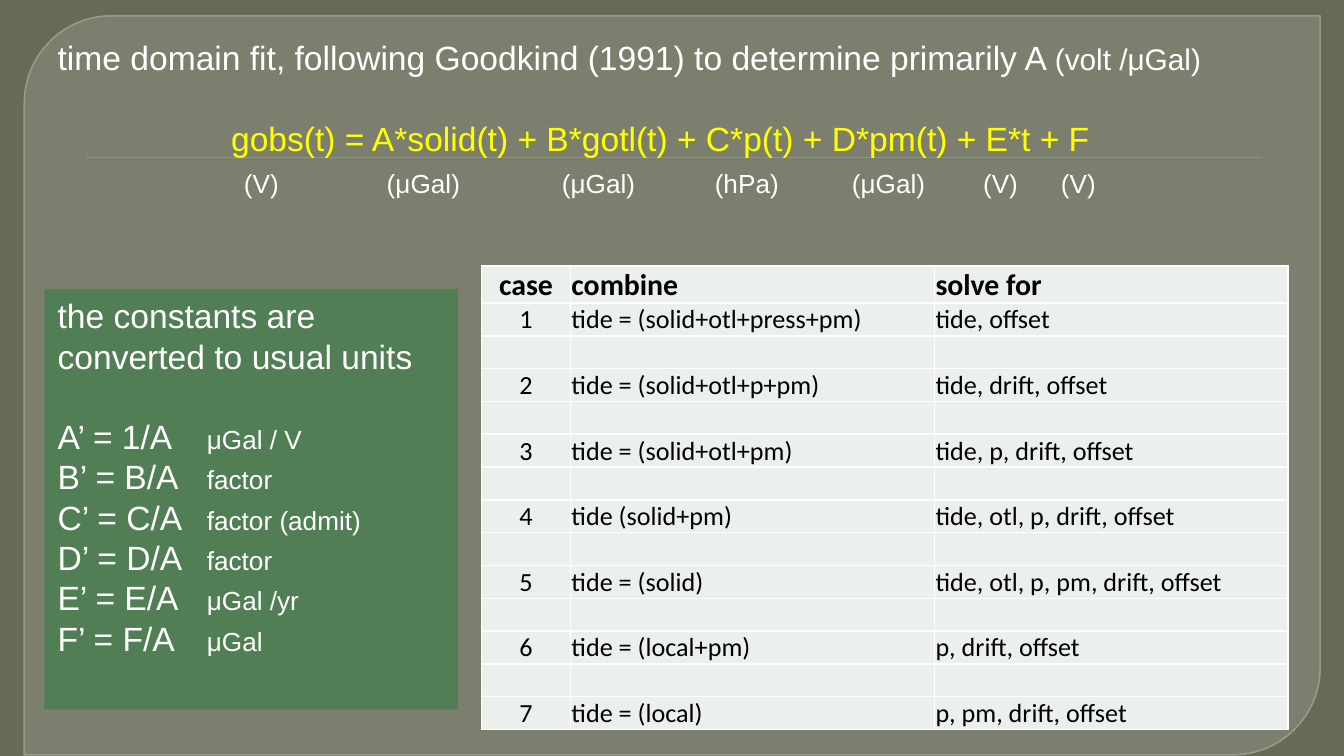
import lxml.etree
import pptx
import pptx.dml.color
import pptx.enum.shapes
import pptx.enum.text
import pptx.oxml.ns
import pptx.util
from pptx.util import Cm, Pt

SHAPE = pptx.enum.shapes.MSO_SHAPE
ALIGN = pptx.enum.text.PP_ALIGN
ANCHOR = pptx.enum.text.MSO_ANCHOR
qn = pptx.oxml.ns.qn

WHITE = "FFFFFF"
PITCH = Pt(21.6)
UNITS = ["(V)", "(μGal)", "(μGal)", "(hPa)", "(μGal)", "(V)", "(V)"]
UNIT_STOPS = [3.52, 6.22, 9.53, 12.42, 15.01, 17.49, 18.96]
CONSTANTS = [
    ("A", "μGal / V"),
    ("B", "factor"),
    ("C", "factor (admit)"),
    ("D", "factor"),
    ("E", "μGal /yr"),
    ("F", "μGal"),
]
CASES = [
    ("tide = (solid+otl+press+pm)", "tide, offset"),
    ("tide = (solid+otl+p+pm)", "tide, drift, offset"),
    ("tide = (solid+otl+pm)", "tide, p, drift, offset"),
    ("tide (solid+pm)", "tide, otl, p, drift, offset"),
    ("tide = (solid)", "tide, otl, p, pm, drift, offset"),
    ("tide = (local+pm)", "p, drift, offset"),
    ("tide = (local)", "p, pm, drift, offset"),
]


def rgb(value):
    """Return the colour for a hex string."""
    return pptx.dml.color.RGBColor.from_string(value)


def set_alpha(fill, percent):
    """Make a solid fill partly transparent."""
    color = fill._xPr.find(qn("a:solidFill"))[0]
    lxml.etree.SubElement(color, qn("a:alpha")).set("val", str(percent * 1000))


def add_box(slide, kind, left, top, width, height, fill):
    """Add a flat shape without outline, measured in centimetres."""
    sp = slide.shapes.add_shape(kind, Cm(left), Cm(top), Cm(width), Cm(height))
    sp.shadow.inherit = False
    sp.fill.solid()
    sp.fill.fore_color.rgb = rgb(fill)
    sp.line.fill.background()
    return sp


def add_panel(slide):
    """Add the translucent panel with two rounded corners."""
    sp = add_box(slide, SHAPE.ROUND_2_DIAG_RECTANGLE, 0.46, 0.3, 24.49, 13.97, "888B7B")
    sp.adjustments[0] = 0.118
    set_alpha(sp.fill, 65)
    sp.line.color.rgb = rgb("9DA090")
    sp.line.width = Pt(0.87)
    set_alpha(sp.line.fill, 88)


def add_tabs(p, stops):
    """Give a paragraph left tab stops in centimetres."""
    tabs = lxml.etree.Element(qn("a:tabLst"))
    for stop in stops:
        lxml.etree.SubElement(tabs, qn("a:tab"), pos=str(Cm(stop)), algn="l")
    pPr = p._p.get_or_add_pPr()
    pPr.insert_element_before(tabs, "a:defRPr", "a:extLst")


def write_line(p, runs, color=WHITE, gap=False, align=ALIGN.LEFT, stops=()):
    """Fill a paragraph with (text, size) runs."""
    p.alignment = align
    p.line_spacing = PITCH
    p.space_before = PITCH if gap else Pt(0)
    p.font.name = "Arial"
    p.font.color.rgb = rgb(color)
    for text, size in runs:
        r = p.add_run()
        r.text = text
        r.font.size = Pt(size)
    if stops:
        add_tabs(p, stops)


def add_formula(slide):
    """Add the heading, the fit equation and the units of its terms."""
    sp = slide.shapes.add_textbox(Cm(0.84), Cm(0.58), Cm(23.29), Cm(3.25))
    tf = sp.text_frame
    tf.word_wrap = True
    heading = "time domain fit, following Goodkind (1991) to determine primarily A "
    write_line(tf.paragraphs[0], [(heading, 18), ("(volt /μGal)", 16)])
    formula = "gobs(t) = A*solid(t) + B*gotl(t) + C*p(t) + D*pm(t) + E*t + F"
    write_line(tf.add_paragraph(), [(formula, 18)], "FFFF00", True, ALIGN.CENTER)
    units = "".join("\t" + unit for unit in UNITS)
    write_line(tf.add_paragraph(), [(units, 14)], stops=UNIT_STOPS)


def add_constants(slide):
    """Add the green box with the converted constants."""
    sp = add_box(slide, SHAPE.RECTANGLE, 0.84, 5.46, 7.82, 7.95, "527E56")
    tf = sp.text_frame
    tf.word_wrap = True
    tf.vertical_anchor = ANCHOR.TOP
    tf.margin_top = Cm(0.12)
    write_line(tf.paragraphs[0], [("the constants are converted to usual units", 18)])
    for i, (name, unit) in enumerate(CONSTANTS):
        divisor = f"{'1' if name == 'A' else name}/A"
        runs = [(f"{name}’ = {divisor}\t", 18), (unit, 14)]
        write_line(tf.add_paragraph(), runs, gap=i == 0, stops=[2.82])


def style_cell(cell, text, centred, header):
    """Write one table cell with its fill and white borders."""
    cell.fill.solid()
    cell.fill.fore_color.rgb = rgb("EBF0EC")
    cell.vertical_anchor = ANCHOR.BOTTOM
    cell.margin_left = cell.margin_right = cell.margin_top = Cm(0.02)
    cell.margin_bottom = 0
    p = cell.text_frame.paragraphs[0]
    if text:
        p.text = text
        p.alignment = ALIGN.CENTER if centred else ALIGN.LEFT
        p.font.name = "Calibri"
        p.font.size = Pt(16 if header else 14)
        p.font.bold = header
        p.font.color.rgb = rgb("000000")
    else:
        p._p.get_or_add_endParaRPr().set("sz", "1400")
    tcPr = cell._tc.get_or_add_tcPr()
    for i, side in enumerate(("a:lnL", "a:lnR", "a:lnT", "a:lnB")):
        ln = lxml.etree.Element(qn(side), w=str(Pt(1)))
        fill = lxml.etree.SubElement(ln, qn("a:solidFill"))
        lxml.etree.SubElement(fill, qn("a:srgbClr"), val=WHITE)
        tcPr.insert(i, ln)


def add_cases(slide):
    """Add the table of cases, with an empty row between cases."""
    rows = [("case", "combine", "solve for")]
    for number, case in enumerate(CASES, 1):
        if number > 1:
            rows.append(("", "", ""))
        rows.append((str(number), *case))
    frame = slide.shapes.add_table(len(rows), 3, Cm(9.1), Cm(5.03), Cm(15.24), Cm(8.76))
    table = frame.table
    for column, width in zip(table.columns, (1.68, 6.88, 6.68)):
        column.width = Cm(width)
    for i, row in enumerate(rows):
        table.rows[i].height = Cm(0.62 if i else 0.7)
        for j, text in enumerate(row):
            style_cell(table.cell(i, j), text, j == 0, i == 0)


def main():
    """Build the slide and save it."""
    prs = pptx.Presentation()
    prs.slide_width, prs.slide_height = Cm(25.4), Cm(14.29)
    s = prs.slides.add_slide(prs.slide_layouts[6])
    s.background.fill.solid()
    s.background.fill.fore_color.rgb = rgb("676A55")
    add_panel(s)
    add_box(s, SHAPE.RECTANGLE, 1.63, 2.97, 22.23, 0.02, "72A376")
    add_formula(s)
    add_cases(s)
    add_constants(s)
    prs.save("out.pptx")


if __name__ == "__main__":
    main()
